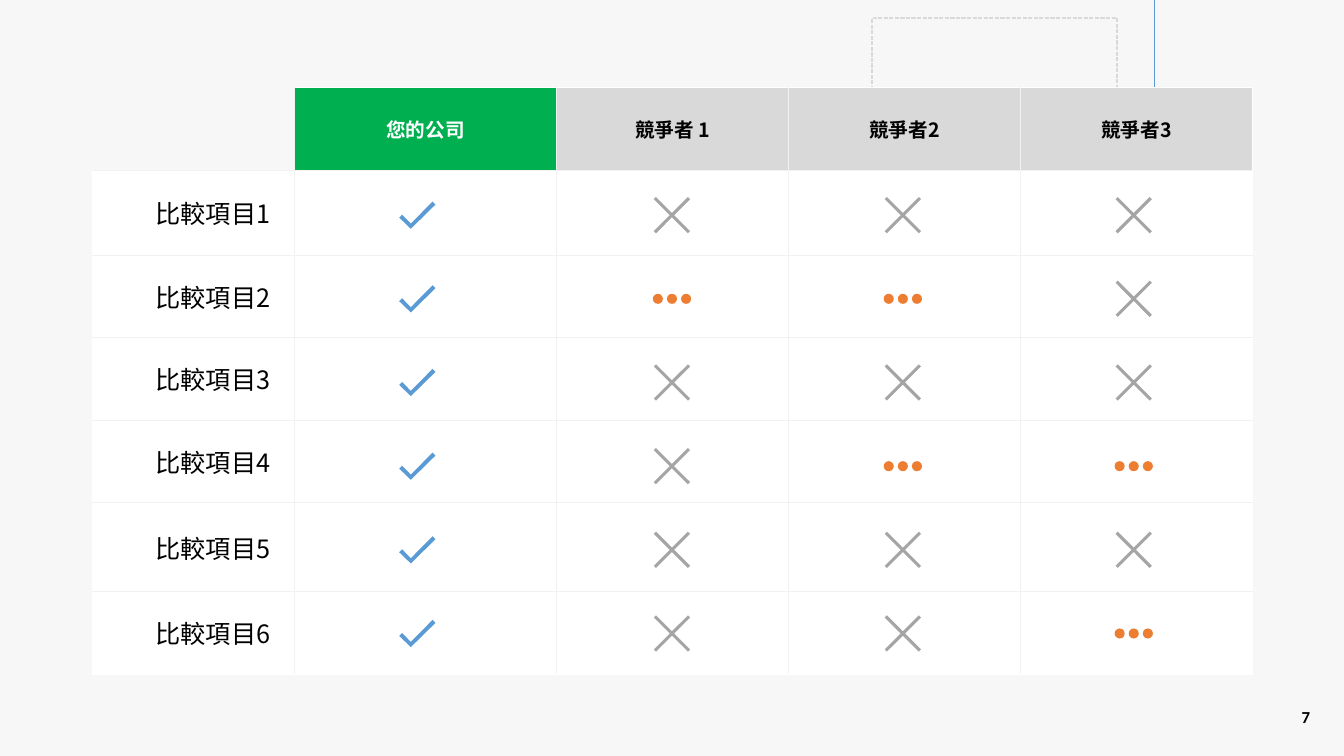
import dataclasses

import lxml.etree
import pptx
import pptx.dml.color
import pptx.enum.dml
import pptx.enum.shapes
import pptx.enum.text
import pptx.oxml
import pptx.oxml.ns
import pptx.util

SHAPE = pptx.enum.shapes.MSO_SHAPE
ALIGN = pptx.enum.text.PP_ALIGN
MIDDLE = pptx.enum.text.MSO_ANCHOR.MIDDLE
qn = pptx.oxml.ns.qn
inch = pptx.util.Inches


@dataclasses.dataclass(frozen=True)
class Theme:
    background: str = "F7F7F7"
    white: str = "FFFFFF"
    text: str = "000000"
    company: str = "00B050"
    rival: str = "D9D9D9"
    grid: str = "F2F2F2"
    check: str = "5B9BD5"
    cross: str = "A5A5A5"
    dots: str = "ED7D31"
    font: str = "Noto Sans CJK SC"
    number_font: str = "Calibri"
    label_size: float = 18
    header_size: float = 14
    number_size: float = 12


@dataclasses.dataclass(frozen=True)
class Box:
    x: float
    y: float
    w: float
    h: float

    def emu(self):
        return [inch(v) for v in (self.x, self.y, self.w, self.h)]

    def cell(self, row, col, rows, cols):
        w, h = self.w / cols, self.h / rows
        return Box(self.x + col * w, self.y + row * h, w, h)

    def centred(self, w, h):
        return Box(self.x + (self.w - w) / 2, self.y + (self.h - h) / 2, w, h)


THEME = Theme()
SLIDE = Box(0, 0, 13.33, 7.5)
TABLE = Box(0.92, 0.87, 11.5, 5.82)
CHECKS = Box(2.84, 1.72, 2.6, 4.98)
RIVALS = Box(5.52, 1.72, 6.87, 4.98)

COLUMNS = [2, 2.6, 2.3, 2.3, 2.3]
ROWS = [0.82, 0.84, 0.82, 0.82, 0.82, 0.88, 0.82]
HEADERS = ["", "您的公司", "競爭者 1", "競爭者2", "競爭者3"]
ITEMS = [f"比較項目{n}" for n in range(1, 7)]
# One string per item, one letter per competitor: x is a cross, o is dots.
RATINGS = ["xxx", "oox", "xxx", "xoo", "xxx", "xxo"]

# Outlines as shares of the mark's box.
CHECK_SIZE = (0.36, 0.27)
CHECK_OUTLINE = [(0.92, 0), (0.32, 0.81), (0.08, 0.48), (0, 0.59), (0.32, 1), (1, 0.11)]
CROSS_SIZE = (0.36, 0.36)
CROSS_OUTLINE = [(1, 0.06), (0.94, 0), (0.5, 0.44), (0.06, 0), (0, 0.06), (0.44, 0.5),
                 (0, 0.94), (0.06, 1), (0.5, 0.56), (0.94, 1), (1, 0.94), (0.56, 0.5)]
DOT, DOT_STEP = 0.1, 0.14


def rgb(value):
    return pptx.dml.color.RGBColor.from_string(value)


def write_text(tf, text, size, font=THEME.font, color=THEME.text, bold=False, align=ALIGN.CENTER):
    p = tf.paragraphs[0]
    p.alignment = align
    r = p.add_run()
    r.text = text
    r.font.size, r.font.bold, r.font.name = pptx.util.Pt(size), bold, font
    r.font.color.rgb = rgb(color)
    ea = lxml.etree.SubElement(r.font._element, qn("a:ea"))
    ea.set("typeface", font)


def paint(sp, color):
    sp.shadow.inherit = False
    sp.fill.solid()
    sp.fill.fore_color.rgb = rgb(color)
    sp.line.fill.background()


def set_borders(cell, colors):
    """Draw left, right, top and bottom borders; None leaves a side without a line."""
    tcPr = cell._tc.get_or_add_tcPr()
    for i, (side, color) in enumerate(zip("LRTB", colors)):
        ln = lxml.etree.Element(qn(f"a:ln{side}"))
        if color is None:
            lxml.etree.SubElement(ln, qn("a:noFill"))
        else:
            ln.set("w", str(pptx.util.Pt(1 if color == THEME.white else 0.75)))
            fill = lxml.etree.SubElement(ln, qn("a:solidFill"))
            lxml.etree.SubElement(fill, qn("a:srgbClr")).set("val", color)
        tcPr.insert(i, ln)


def add_backdrop(s, box):
    s.background.fill.solid()
    s.background.fill.fore_color.rgb = rgb(THEME.background)
    frame = Box(box.x + 8.65, box.y + 0.18, 2.43, 0.82)
    sp = s.shapes.add_shape(SHAPE.RECTANGLE, *frame.emu())
    sp.shadow.inherit = False
    sp.fill.background()
    sp.line.color.rgb = rgb(THEME.rival)
    sp.line.width = pptx.util.Pt(1)
    sp.line.dash_style = pptx.enum.dml.MSO_LINE.SQUARE_DOT

    x = inch(box.x + 11.45)
    line = s.shapes.add_connector(pptx.enum.shapes.MSO_CONNECTOR.STRAIGHT,
                                  x, inch(box.y), x, inch(box.y + 1.28))
    line.line.color.rgb = rgb(THEME.check)
    line.line.width = pptx.util.Pt(0.5)
    lxml.etree.SubElement(line._element.spPr, qn("a:effectLst"))


def add_page_number(s, box, number):
    area = Box(box.x + box.w - 0.55, box.y + box.h - 0.55, 0.34, 0.33)
    tf = s.shapes.add_textbox(*area.emu()).text_frame
    tf.word_wrap = False
    tf.vertical_anchor = MIDDLE
    tf.margin_left = tf.margin_right = inch(0.13)
    tf.margin_top = tf.margin_bottom = inch(0.07)
    write_text(tf, number, THEME.number_size, font=THEME.number_font, bold=True)


def add_comparison_table(s, box):
    table = s.shapes.add_table(len(ROWS), len(COLUMNS), *box.emu()).table
    table.first_row = table.horz_banding = False
    for col, width in zip(table.columns, COLUMNS):
        col.width = inch(width)
    for row, height in zip(table.rows, ROWS):
        row.height = inch(height)

    for r in range(len(ROWS)):
        for c in range(len(COLUMNS)):
            cell = table.cell(r, c)
            cell.vertical_anchor = MIDDLE
            corner = r == 0 and c == 0
            if corner:
                cell.fill.background()
            else:
                header = THEME.company if c == 1 else THEME.rival
                cell.fill.solid()
                cell.fill.fore_color.rgb = rgb(THEME.white if r else header)
            outer = (c == 0, c == len(COLUMNS) - 1, r == 0, r == len(ROWS) - 1)
            edge = None if corner else THEME.white
            set_borders(cell, [edge if out else THEME.grid for out in outer])
            if r == 0 and c:
                write_text(cell.text_frame, HEADERS[c], THEME.header_size, bold=True,
                           color=THEME.white if c == 1 else THEME.text)
            elif r and c == 0:
                cell.margin_right = inch(0.24)
                write_text(cell.text_frame, ITEMS[r - 1], THEME.label_size, align=ALIGN.RIGHT)


def add_outline(s, box, outline, color):
    points = [(inch(box.x + x * box.w), inch(box.y + y * box.h)) for x, y in outline]
    builder = s.shapes.build_freeform(*points[0])
    builder.add_line_segments(points[1:], close=True)
    paint(builder.convert_to_shape(), color)


def add_dots(s, box):
    row = box.centred(2 * DOT_STEP + DOT, DOT)
    group = s.shapes.add_group_shape()
    for i in range(3):
        dot = Box(row.x + i * DOT_STEP, row.y, DOT, DOT)
        paint(group.shapes.add_shape(SHAPE.OVAL, *dot.emu()), THEME.dots)


def add_marks(s, checks, rivals):
    for r, ratings in enumerate(RATINGS):
        area = checks.cell(r, 0, len(RATINGS), 1)
        add_outline(s, area.centred(*CHECK_SIZE), CHECK_OUTLINE, THEME.check)
        for c, rating in enumerate(ratings):
            area = rivals.cell(r, c, len(RATINGS), len(ratings))
            if rating == "x":
                add_outline(s, area.centred(*CROSS_SIZE), CROSS_OUTLINE, THEME.cross)
            else:
                add_dots(s, area)


def main():
    prs = pptx.Presentation()
    prs.slide_width, prs.slide_height = inch(SLIDE.w), inch(SLIDE.h)
    s = prs.slides.add_slide(prs.slide_layouts[6])
    add_backdrop(s, SLIDE)
    add_page_number(s, SLIDE, "7")
    add_comparison_table(s, TABLE)
    add_marks(s, CHECKS, RIVALS)
    prs.save("out.pptx")


if __name__ == "__main__":
    main()
